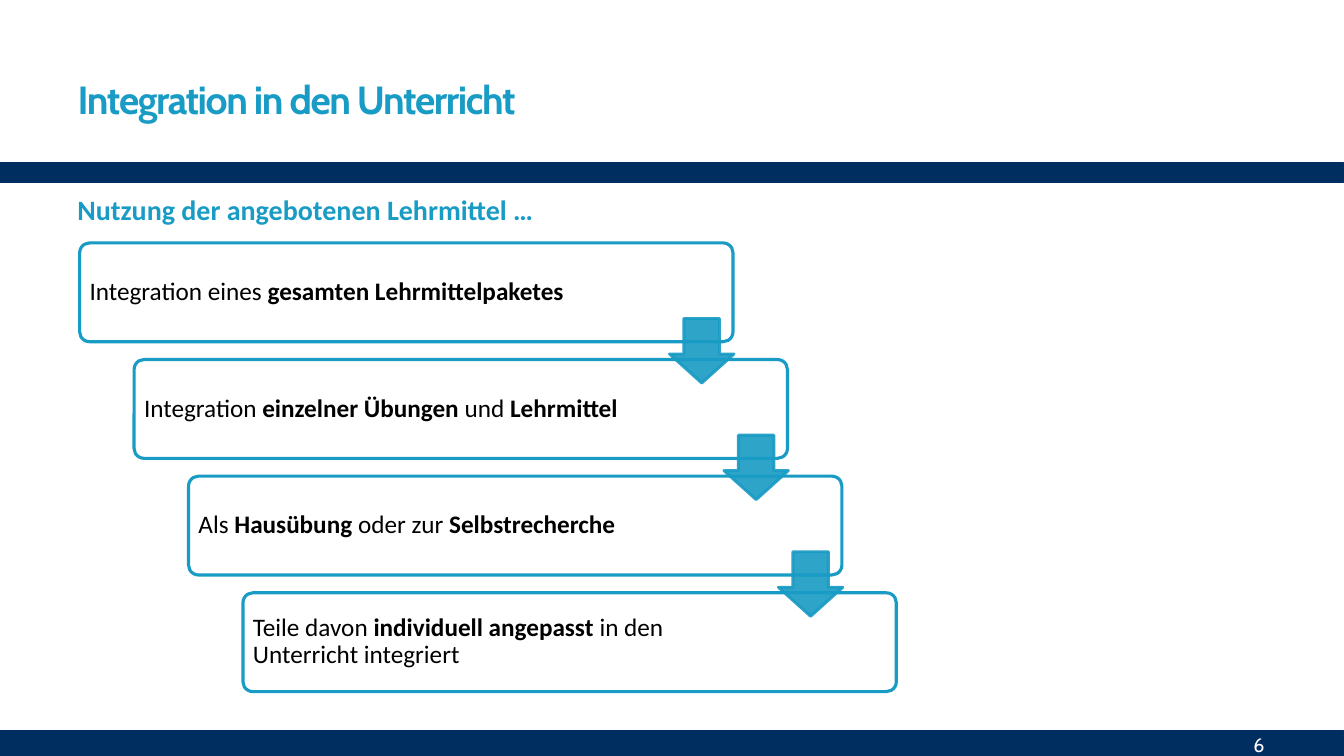
import pptx
import pptx.util
import pptx.dml.color
import pptx.enum.shapes
import pptx.enum.text
import pptx.oxml.ns
import lxml.etree

Inches = pptx.util.Inches
Pt = pptx.util.Pt
SHAPES = pptx.enum.shapes.MSO_SHAPE
ALIGN = pptx.enum.text.PP_ALIGN
MIDDLE = pptx.enum.text.MSO_ANCHOR.MIDDLE

COLORS = {"navy": "002E60", "teal": "189BC4", "white": "FFFFFF", "black": "000000"}


def rgb(name):
    return pptx.dml.color.RGBColor.from_string(COLORS[name])


def add_block(kind, left, top, width, height, fill, line, line_width):
    block = slide.shapes.add_shape(
        kind, Inches(left), Inches(top), Inches(width), Inches(height))
    block.shadow.inherit = False
    block.fill.solid()
    block.fill.fore_color.rgb = rgb(fill)
    block.line.color.rgb = rgb(line)
    block.line.width = Pt(line_width)
    return block


deck = pptx.Presentation()
deck.slide_width = Inches(13.33)
deck.slide_height = Inches(7.5)
slide = deck.slides.add_slide(deck.slide_layouts[5])

for top, height in [(7.26, 0.24), (1.62, 0.18)]:
    add_block(SHAPES.RECTANGLE, 0, top, 13.33, height, "navy", "navy", 2.08)

heading = slide.shapes.title
subheading = slide.shapes.add_textbox(0, 0, 0, 0)
page_number = slide.shapes.add_textbox(0, 0, 0, 0)
labels = [
    (heading, "Integration in den Unterricht", (0.67, 0.44, 6.94, 1.08),
     "Cabin", 28, "teal", True, ALIGN.LEFT),
    (subheading, "Nutzung der angebotenen Lehrmittel …", (0.67, 1.86, 12, 0.45),
     "Calibri", 20, "teal", True, ALIGN.LEFT),
    (page_number, "6", (11.08, 7.21, 1.56, 0.36),
     "Cabin", 14, "white", False, ALIGN.RIGHT),
]
for label, wording, place, font_name, size, color, bold, align in labels:
    label.left, label.top, label.width, label.height = map(Inches, place)
    frame = label.text_frame
    frame.text = wording
    frame.word_wrap = True
    frame.auto_size = pptx.enum.text.MSO_AUTO_SIZE.NONE
    frame.paragraphs[0].alignment = align
    font = frame.paragraphs[0].runs[0].font
    font.name = font_name
    font.size = Pt(size)
    font.bold = bold
    font.color.rgb = rgb(color)
heading.text_frame.vertical_anchor = MIDDLE
page_number.text_frame.vertical_anchor = MIDDLE
heading.text_frame.paragraphs[0].runs[0]._r.get_or_add_rPr().set("spc", "-100")

steps = [
    [("Integration eines ", False), ("gesamten Lehrmittelpaketes", True)],
    [("Integration ", False), ("einzelner Übungen ", True),
     ("und ", False), ("Lehrmittel", True)],
    [("Als ", False), ("Hausübung", True),
     (" oder zur ", False), ("Selbstrecherche", True)],
    [("Teile davon ", False), ("individuell angepasst ", True),
     ("in den Unterricht integriert", False)],
]
step_left, step_top = 0.79, 2.41
shift_x, shift_y = 0.54, 1.157

for index, wording in enumerate(steps):
    step = add_block(SHAPES.ROUNDED_RECTANGLE, step_left + index * shift_x,
                     step_top + index * shift_y, 6.48, 0.98, "white", "teal", 2.25)
    step.adjustments[0] = 0.1
    frame = step.text_frame
    frame.word_wrap = True
    frame.vertical_anchor = MIDDLE
    frame.margin_left = Inches(0.07)
    frame.margin_right = Inches(1.2)
    paragraph = frame.paragraphs[0]
    paragraph.alignment = ALIGN.LEFT
    paragraph.line_spacing = 0.9
    for part, bold in wording:
        run = paragraph.add_run()
        run.text = part
        run.font.name = "Calibri"
        run.font.size = Pt(18)
        run.font.bold = bold
        run.font.color.rgb = rgb("black")

for index in range(len(steps) - 1):
    arrow = add_block(SHAPES.DOWN_ARROW, 6.64 + index * shift_x,
                      3.16 + index * shift_y, 0.64, 0.64, "teal", "teal", 2.08)
    arrow.adjustments[0] = 0.55
    arrow.adjustments[1] = 0.45
    for color in arrow._element.spPr.iter(pptx.oxml.ns.qn("a:srgbClr")):
        lxml.etree.SubElement(color, pptx.oxml.ns.qn("a:alpha")).set("val", "90000")

deck.save("out.pptx")
